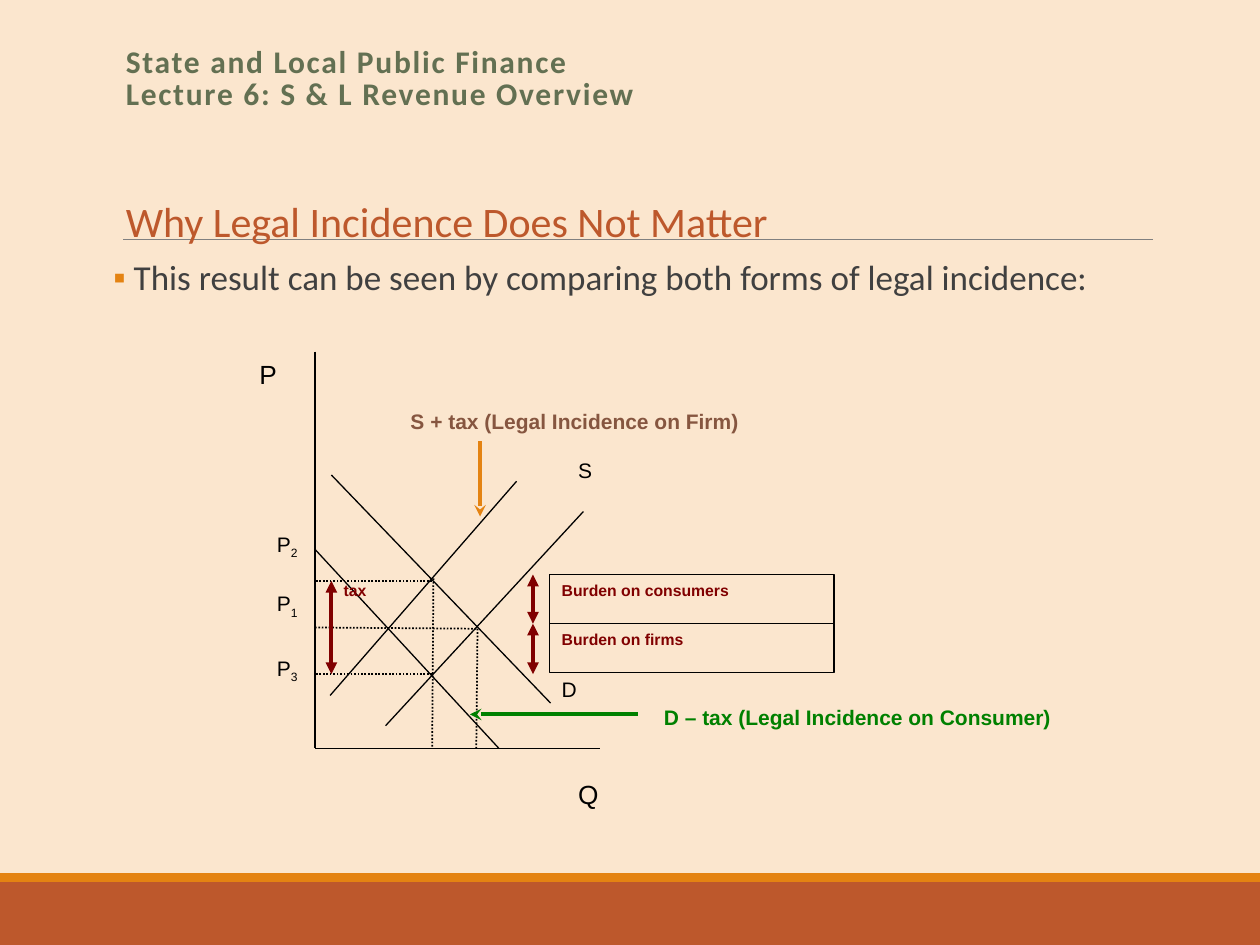
from lxml import etree
from pptx import Presentation
from pptx import util as u
from pptx.dml import color
from pptx.enum import dml, shapes, text
from pptx.oxml import ns

COLORS = {
    "cream": "FBE6CE", "rust": "BD582C", "orange": "E48312", "rule": "808080",
    "olive": "637052", "body": "404040", "black": "000000", "brown": "865640",
    "maroon": "800000", "green": "008000",
}


def rgb(name):
    """Return the named palette colour."""
    return color.RGBColor.from_string(COLORS[name])


def add_child(parent, tag, **attributes):
    """Append a DrawingML element with the given attributes."""
    return etree.SubElement(parent, ns.qn(tag), attributes)


def write_text(frame, words, size=12, ink="black", font="Arial", bold=False,
               spacing=None, leading=None, subscript=None, wrap=True):
    """Write one formatted paragraph, with an optional subscript, and return it."""
    frame.word_wrap = wrap
    frame.vertical_anchor = text.MSO_ANCHOR.TOP
    para = frame.paragraphs[0]
    para.alignment = text.PP_ALIGN.LEFT
    para.text = words
    if leading:
        para.line_spacing = leading
    if subscript:
        para.add_run().text = subscript
    for span in para.runs:
        span.font.size = u.Pt(size)
        span.font.name = font
        span.font.bold = bold
        span.font.color.rgb = rgb(ink)
        if spacing:
            span.font._element.set("spc", str(spacing))
    if subscript:
        para.runs[-1].font._element.set("baseline", "-25000")
    return para


def add_text(page, left, top, width, height, words, **style):
    """Add a text box and return its shape and paragraph."""
    box = page.shapes.add_textbox(*map(u.Inches, (left, top, width, height)))
    return box, write_text(box.text_frame, words, **style)


def add_rect(page, left, top, width, height, fill, outline=None):
    """Add a flat rectangle with an optional thin outline."""
    box = page.shapes.add_shape(shapes.MSO_SHAPE.RECTANGLE,
                                *map(u.Inches, (left, top, width, height)))
    box.shadow.inherit = False
    box.fill.solid()
    box.fill.fore_color.rgb = rgb(fill)
    if outline:
        box.line.color.rgb = rgb(outline)
        box.line.width = u.Pt(0.75)
    else:
        box.line.fill.background()
    return box


def add_line(page, start, end, ink="black", width=0.75, dotted=False,
             head=None, tail=None):
    """Add a straight connector with optional dots and arrowheads."""
    line = page.shapes.add_connector(shapes.MSO_CONNECTOR.STRAIGHT,
                                     *map(u.Inches, (*start, *end)))
    line.line.color.rgb = rgb(ink)
    line.line.width = u.Pt(width)
    if dotted:
        line.line.dash_style = dml.MSO_LINE.ROUND_DOT
    outline = line.line._get_or_add_ln()
    for tag, kind in (("a:headEnd", head), ("a:tailEnd", tail)):
        if kind:
            add_child(outline, tag, type=kind)
    add_child(line._element.spPr, "a:effectLst")
    return line


def draw_frame(page, width, height):
    """Draw the background, the footer bands and the title rule."""
    page.background.fill.solid()
    page.background.fill.fore_color.rgb = rgb("cream")
    add_rect(page, 0, height - 0.5, width, 0.5, "rust")
    add_rect(page, 0, height - 0.57, width, 0.07, "orange")
    add_line(page, (0.98, 1.9), (9.15, 1.9), ink="rule", width=0.5)


def draw_headings(page, left, top, width):
    """Write the lecture name, the slide title and the bullet."""
    add_text(page, left, top, width, 0.65,
             "State and Local Public Finance\vLecture 6: S & L Revenue Overview",
             size=18, ink="olive", font="Calibri", bold=True, spacing=100, leading=0.85)
    add_text(page, left, top + 1.17, 5.46, 0.5, "Why Legal Incidence Does Not Matter",
             size=24, ink="rust", font="Calibri", wrap=False)
    box, para = add_text(
        page, left, top + 1.69, width, 4.4,
        " This result can be seen by comparing both forms of legal incidence:",
        size=20, ink="body", font="Calibri", leading=0.9)
    box.text_frame.margin_left = box.text_frame.margin_right = 0
    para.space_before, para.space_after = u.Pt(6.8), u.Pt(1.1)
    props = para._p.get_or_add_pPr()
    props.set("marL", str(u.Inches(0.06)))
    props.set("indent", str(u.Inches(-0.06)))
    add_child(add_child(props, "a:buClr"), "a:srgbClr", val=COLORS["orange"])
    add_child(props, "a:buFont", typeface="Arial")
    add_child(props, "a:buChar", char="▪")


def draw_curves(page, left, top):
    """Draw the axes, the supply and demand lines and the dotted guides."""
    axes = [((0, 0), (0, 3.15)), ((0, 3.15), (2.26, 3.15))]
    demand = [((0.13, 0.98), (1.87, 2.79)), ((0, 1.57), (1.46, 3.15))]
    supply = [((0.12, 2.73), (1.6, 1.03)), ((0.56, 2.97), (2.13, 1.27))]
    guides = [((1.28, 2.2), (0, 2.19)), ((0.93, 1.82), (0, 1.82)),
              ((0.93, 2.56), (0, 2.56)), ((0.94, 1.8), (0.93, 3.15)),
              ((1.29, 2.2), (1.28, 3.15))]
    solid = dict(width=0.75)
    dots = dict(width=1, dotted=True)
    for group, style in ((axes, solid), (demand, solid), (supply, solid), (guides, dots)):
        for (x1, y1), (x2, y2) in group:
            add_line(page, (left + x1, top + y1), (left + x2, top + y2), **style)


def draw_burdens(page, left, top):
    """Draw the stacked burden boxes and the double-headed tax arrows."""
    for row, words in enumerate(("Burden on consumers", "Burden on firms")):
        box = add_rect(page, left + 1.86, top + 1.77 + 0.39 * row, 2.26, 0.39,
                       "cream", "black")
        write_text(box.text_frame, words, size=9, ink="maroon", bold=True)
    for x, y1, y2 in ((0.13, 1.82, 2.56), (1.73, 1.77, 2.16), (1.73, 2.16, 2.56)):
        add_line(page, (left + x, top + y1), (left + x, top + y2), ink="maroon",
                 width=2.25, head="triangle", tail="triangle")


def draw_labels(page, left, top):
    """Write the diagram labels and point at the shifted curves."""
    for x, y, words in ((-0.54, 0, "P"), (1.99, 3.34, "Q")):
        add_text(page, left + x, top + y, 0.4, 0.79, words, size=15)
    for x, y, words in ((1.99, 0.79, "S"), (1.86, 2.53, "D")):
        add_text(page, left + x, top + y, 0.67, 0.59, words)
    for y, number in ((1.85, "1"), (1.38, "2"), (2.36, "3")):
        add_text(page, left - 0.4, top + y, 0.53, 0.59, "P", subscript=number)
    add_text(page, left + 0.13, top + 1.77, 0.53, 0.78, "tax",
             size=9, ink="maroon", bold=True)
    add_text(page, left + 0.66, top + 0.4, 4.74, 0.59,
             "S + tax (Legal Incidence on Firm)", ink="brown", bold=True)
    add_text(page, left + 2.67, top + 2.75, 3.81, 0.59,
             "D – tax (Legal Incidence on Consumer)", ink="green", bold=True)
    add_line(page, (left + 2.56, top + 2.88), (left + 1.23, top + 2.88),
             ink="green", width=2.25, tail="stealth")
    add_line(page, (left + 1.31, top + 0.71), (left + 1.31, top + 1.31),
             ink="orange", width=2.25, tail="stealth")


def main():
    """Build and save the slide."""
    deck = Presentation()
    deck.slide_width, deck.slide_height = u.Inches(10), u.Inches(7.5)
    page = deck.slides.add_slide(deck.slide_layouts[6])
    draw_frame(page, 10, 7.5)
    draw_headings(page, 0.9, 0.33, 8.25)
    for draw in (draw_curves, draw_burdens, draw_labels):
        draw(page, 2.5, 2.79)
    deck.save("out.pptx")


if __name__ == "__main__":
    main()
